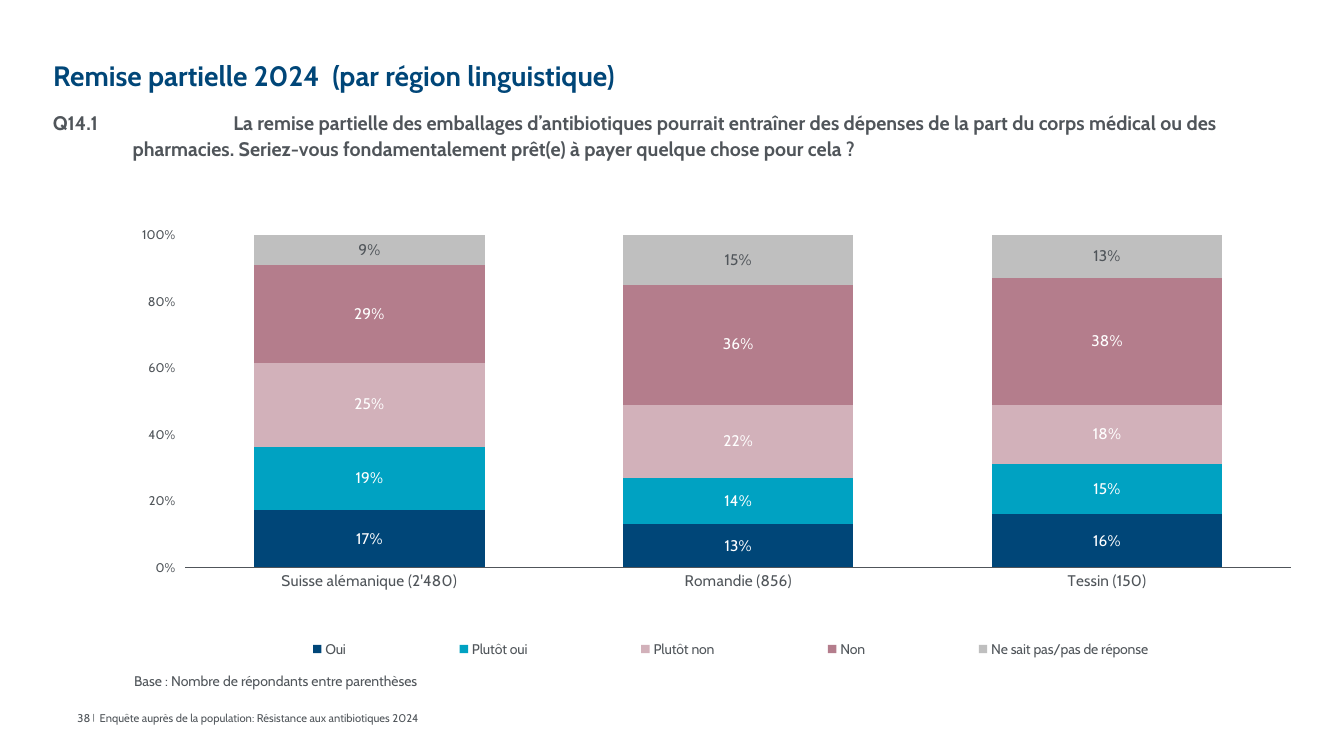
"""Build the slide on partial dispensing by language region."""
from lxml import etree
from pptx import Presentation
from pptx import util as u
from pptx.chart import data as cd
from pptx.dml.color import RGBColor
from pptx.enum import chart as ec, text as et
from pptx.oxml import ns

NAVY = RGBColor(0x00, 0x46, 0x78)
TEAL = RGBColor(0x00, 0xA2, 0xC2)
ROSE = RGBColor(0xD2, 0xB1, 0xBA)
PLUM = RGBColor(0xB4, 0x7D, 0x8C)
SILVER = RGBColor(0xBF, 0xBF, 0xBF)
GREY = RGBColor(0x50, 0x55, 0x5A)
WHITE = RGBColor(0xFF, 0xFF, 0xFF)
FACE = "Cabin"


def style(font, size, color=GREY, bold=False):
    font.name, font.size, font.bold = FACE, u.Pt(size), bold
    font.color.rgb = color


def place(kind, x, y, w, h):
    layout = etree.Element(ns.qn("c:layout"))
    manual = etree.SubElement(layout, ns.qn("c:manualLayout"))
    rows = [("xMode", "edge"), ("yMode", "edge"), ("x", x), ("y", y), ("w", w), ("h", h)]
    if kind:
        rows.insert(0, ("layoutTarget", kind))
    for tag, val in rows:
        etree.SubElement(manual, ns.qn("c:" + tag)).set("val", str(val))
    return layout


deck = Presentation()
deck.slide_width, deck.slide_height = u.Pt(960), u.Pt(540)
slide = deck.slides.add_slide(deck.slide_layouts[6])

TOP, BASE = et.MSO_ANCHOR.TOP, et.MSO_ANCHOR.BOTTOM
texts = [
    ("title", "Remise partielle 2024  (par région linguistique)",
     (38, 21, 595.5, 45), BASE, 20, NAVY, True, 0.9),
    ("footer", "Enquête auprès de la population: Résistance aux antibiotiques 2024",
     (71.2, 506.5, 562, 11.5), BASE, 8, GREY, False, 1),
    ("page", "38 ", (37.5, 506.5, 30.2, 11.5), BASE, 8, GREY, False, 1),
    ("question", "Q14.1\t\t\tLa remise partielle des emballages d’antibiotiques pourrait "
     "entraîner des dépenses de la part du corps médical ou des pharmacies. "
     "Seriez-vous fondamentalement prêt(e) à payer quelque chose pour cela ?",
     (37.7, 77.5, 873.5, 34), TOP, 14, GREY, True, 1.1),
    ("base", "Base : Nombre de répondants entre parenthèses",
     (95.8, 479.5, 535.5, 11.5), TOP, 10, GREY, False, 1.1),
]
paras = {}
for name, words, area, anchor, size, color, bold, gap in texts:
    box = slide.shapes.add_textbox(*map(u.Pt, area))
    frame = box.text_frame
    frame.word_wrap, frame.vertical_anchor = True, anchor
    frame.margin_left = frame.margin_right = frame.margin_top = frame.margin_bottom = 0
    para = paras[name] = frame.paragraphs[0]
    para.add_run().text = words
    para.line_spacing = gap
    style(para.font, size, color, bold)

hang = paras["question"]._p.get_or_add_pPr()
hang.set("marL", str(u.Pt(57)))
hang.set("indent", str(u.Pt(-57)))

paras["page"].alignment = et.PP_ALIGN.RIGHT
bar = paras["page"].add_run()
bar.text = "|"
bar.font.size = u.Pt(10)
bar.font._element.set("baseline", "10000")

series = [
    ("Oui", (0.17, 0.13, 0.16), NAVY, WHITE),
    ("Plutôt oui", (0.19, 0.14, 0.15), TEAL, WHITE),
    ("Plutôt non", (0.25, 0.22, 0.18), ROSE, WHITE),
    ("Non", (0.29, 0.36, 0.38), PLUM, WHITE),
    ("Ne sait pas/pas de réponse", (0.09, 0.15, 0.13), SILVER, GREY),
]
data = cd.CategoryChartData(number_format="0%")
data.categories = ["Suisse alémanique (2'480)", "Romandie (856)", "Tessin (150)"]
for name, vals, fill, ink in series:
    data.add_series(name, vals)
chart = slide.shapes.add_chart(
    ec.XL_CHART_TYPE.COLUMN_STACKED_100,
    u.Pt(95), u.Pt(156.5), u.Pt(845.3), u.Pt(323.3), data).chart
chart.has_title = False
style(chart.font, 12)

plot = chart.plots[0]
plot.gap_width, plot.overlap, plot.vary_by_categories = 60, 100, False
for ser, (name, vals, fill, ink) in zip(plot.series, series):
    ser.format.fill.solid()
    ser.format.fill.fore_color.rgb = fill
    tags = ser.data_labels
    tags.show_value = True
    tags.number_format, tags.number_format_is_linked = "0%", False
    style(tags.font, 11, ink)

for axis, size in ((chart.category_axis, 11), (chart.value_axis, 9)):
    axis.major_tick_mark = axis.minor_tick_mark = ec.XL_TICK_MARK.NONE
    axis.has_major_gridlines = False
    style(axis.tick_labels.font, size)
line = chart.category_axis.format.line
line.color.rgb, line.width = GREY, u.Pt(0.5)
scale = chart.value_axis
scale.format.line.fill.background()
scale.minimum_scale, scale.maximum_scale, scale.major_unit = 0, 1, 0.2
scale.tick_label_position = ec.XL_TICK_LABEL_POSITION.LOW
scale.tick_labels.number_format = "0%"
scale.tick_labels.number_format_is_linked = False

chart.has_legend = True
chart.legend.position = ec.XL_LEGEND_POSITION.BOTTOM
chart.legend.include_in_layout = False
style(chart.legend.font, 10)

area = chart.element.find(".//" + ns.qn("c:plotArea"))
for old in area.findall(ns.qn("c:layout")):
    area.remove(old)
area.insert(0, place("inner", 0.044, 0.035, 0.935, 0.735))
key = chart.element.find(".//" + ns.qn("c:legend"))
for old in key.findall(ns.qn("c:layout")):
    key.remove(old)
key.find(ns.qn("c:legendPos")).addnext(place(None, 0.06, 0.92, 0.89, 0.06))

deck.save("out.pptx")
